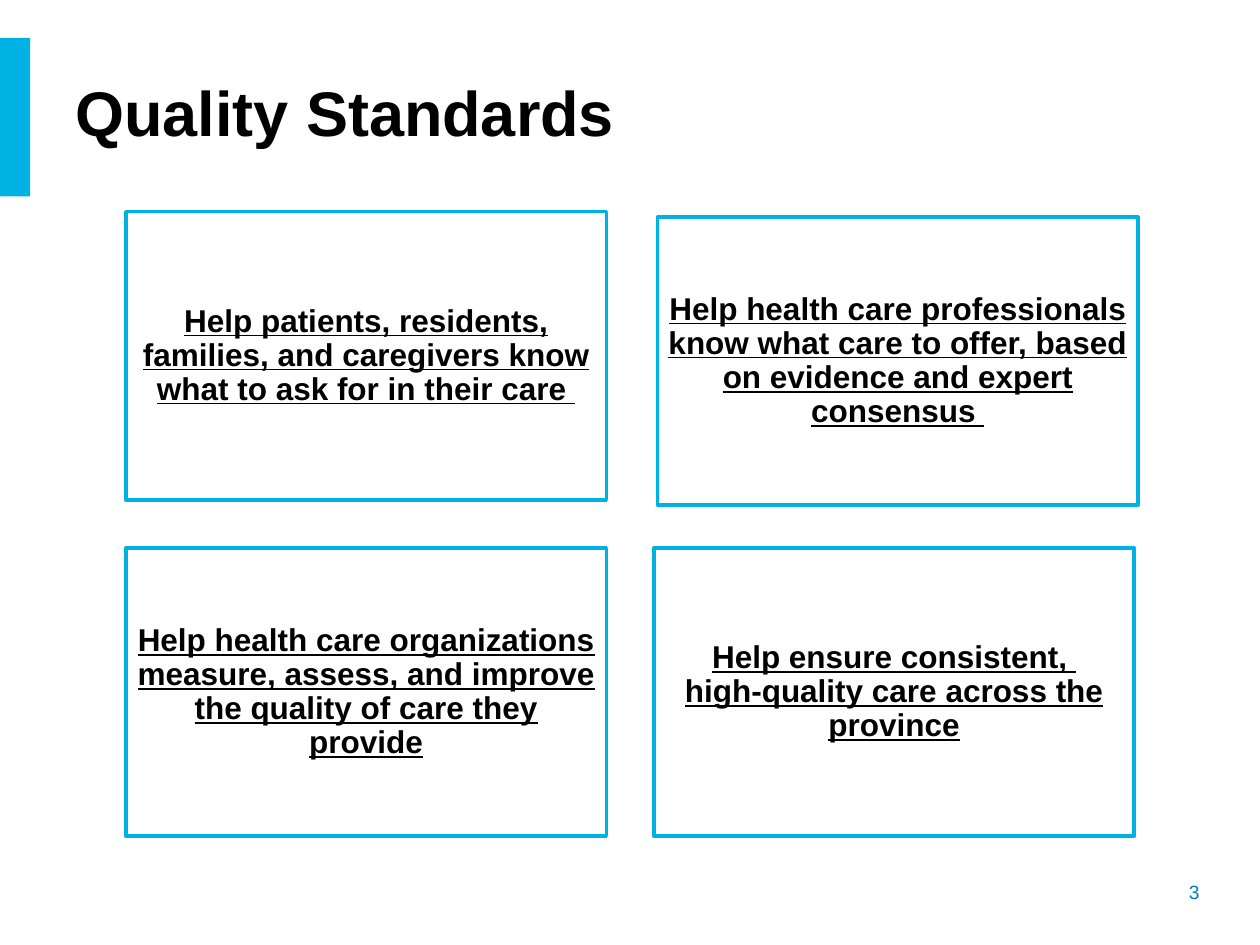
from pptx import Presentation
from pptx.dml.color import RGBColor
from pptx.enum import shapes, text
from pptx.util import Pt

CYAN = RGBColor(0x00, 0xB2, 0xE3)
BLUE = RGBColor(0x04, 0x7B, 0xC1)
BLACK = RGBColor(0x00, 0x00, 0x00)


class Deck:
    """Holds the style and the current slide; all lengths are in points."""
    font = "Arial"
    line_width = 2

    def __init__(self, slide):
        self.s = slide

    def set_text(self, tf, content, size, color, bold=False, align=text.PP_ALIGN.LEFT):
        tf.word_wrap = True
        tf.vertical_anchor = text.MSO_ANCHOR.MIDDLE
        p = tf.paragraphs[0]
        p.text = content
        p.alignment = align
        p.font.name, p.font.size, p.font.bold = self.font, Pt(size), bold
        p.font.color.rgb = color
        return p

    def label(self, x, y, w, h, content, size, color, **style):
        sp = self.s.shapes.add_textbox(Pt(x), Pt(y), Pt(w), Pt(h))
        self.set_text(sp.text_frame, content, size, color, **style)

    def rect(self, x, y, w, h):
        sp = self.s.shapes.add_shape(shapes.MSO_SHAPE.RECTANGLE,
                                     Pt(x), Pt(y), Pt(w), Pt(h))
        sp.shadow.inherit = False
        return sp

    def bar(self, x, y, w, h):
        sp = self.rect(x, y, w, h)
        sp.fill.solid()
        sp.fill.fore_color.rgb = CYAN
        sp.line.fill.background()

    def card(self, x, y, w, h, content, tail=""):
        sp = self.rect(x, y, w, h)
        sp.fill.background()
        sp.line.color.rgb = CYAN
        sp.line.width = Pt(self.line_width)
        tf = sp.text_frame
        tf.margin_left = tf.margin_right = tf.margin_top = tf.margin_bottom = Pt(5)
        p = self.set_text(tf, content, 18, BLACK, bold=True, align=text.PP_ALIGN.CENTER)
        p.font.underline = True
        p.line_spacing = 0.9
        if tail:
            r = p.add_run()
            r.text = tail
            r.font.bold = False


def main():
    prs = Presentation()
    prs.slide_width, prs.slide_height = Pt(720), Pt(540)
    deck = Deck(prs.slides.add_slide(prs.slide_layouts[6]))

    # Page number, accent bar and title
    deck.label(608.4, 499, 84.2, 21, "3", 11, BLUE, align=text.PP_ALIGN.RIGHT)
    deck.bar(0, 21.6, 17.3, 90.7)
    deck.label(36, 36, 562.3, 55.4, "Quality Standards", 36, BLACK, bold=True)

    # Four aims; the top right card sits slightly off the grid
    cards = [
        (72, 121, "Help patients, residents, families, and caregivers know "
                  "what to ask for in their care "),
        (375.8, 123.9, "Help health care professionals know what care to offer, "
                       "based on evidence and expert consensus", " "),
        (72, 313.2, "Help health care organizations measure, assess, and improve "
                    "the quality of care they provide"),
        (373.7, 313.2, "Help ensure consistent, \nhigh-quality care across the province"),
    ]
    for x, y, *content in cards:
        deck.card(x, y, 274.5, 164.7, *content)

    prs.save("out.pptx")


if __name__ == "__main__":
    main()
